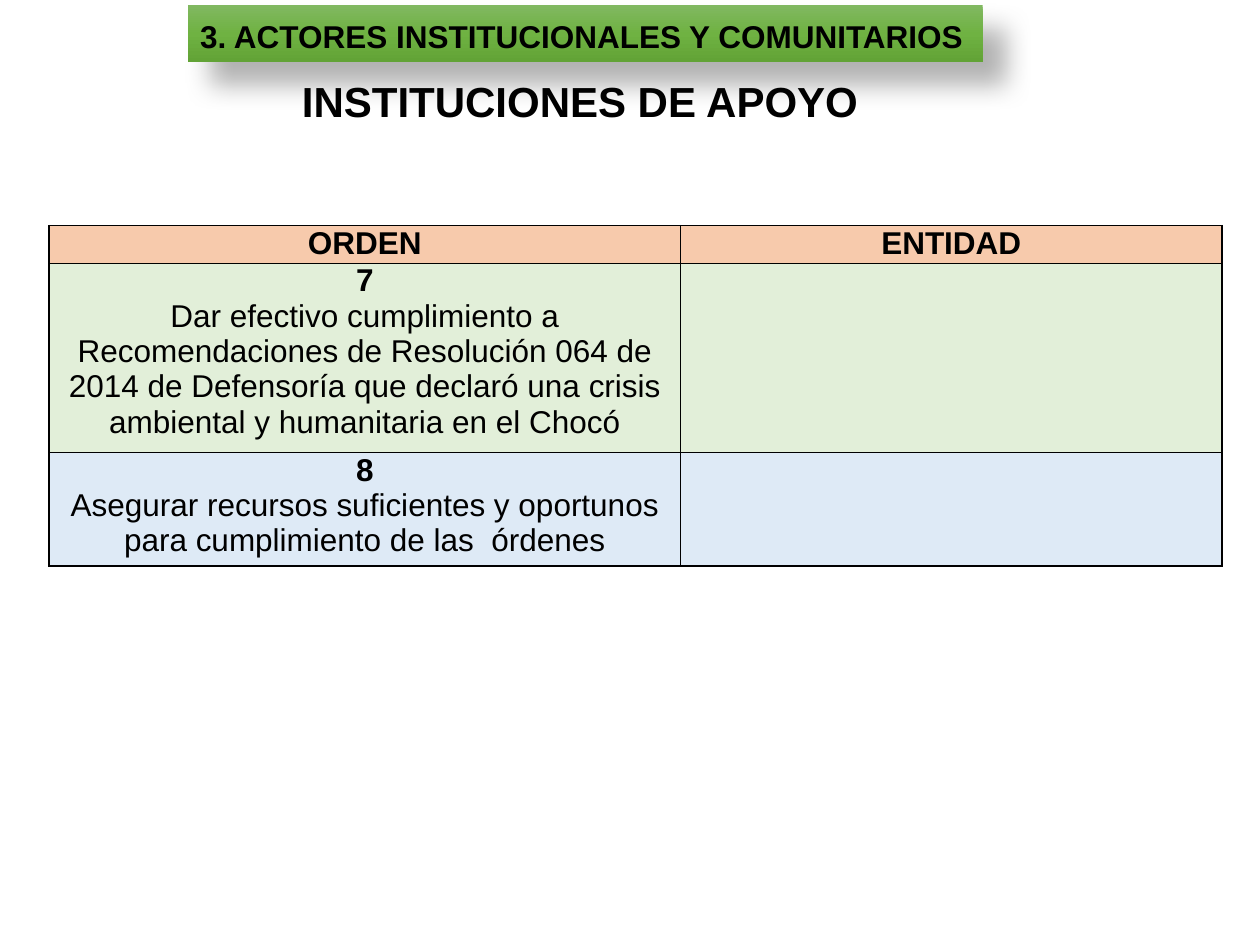
import copy
from dataclasses import dataclass

import pptx
import pptx.dml.color
import pptx.enum.shapes
import pptx.enum.text
import pptx.oxml.ns
import pptx.util
from lxml import etree

Inches = pptx.util.Inches
Pt = pptx.util.Pt
qn = pptx.oxml.ns.qn
ALIGN = pptx.enum.text.PP_ALIGN


@dataclass
class Row:
    height: float
    fill: str
    cells: tuple[tuple[str, ...], ...]  # paragraphs per cell, the first one bold


COL_WIDTHS = (5.01, 4.3)
ROWS = (
    Row(0.3, "F7CAAC", (("ORDEN",), ("ENTIDAD",))),
    Row(1.5, "E2EFD9", (("7", "Dar efectivo cumplimiento a Recomendaciones de "
                         "Resolución 064 de 2014 de Defensoría que declaró una "
                         "crisis ambiental y humanitaria en el Chocó"), ())),
    Row(0.9, "DEEAF6", (("8", "Asegurar recursos suficientes y oportunos para "
                         "cumplimiento de las  órdenes"), ())),
)


def rgb(value: str) -> pptx.dml.color.RGBColor:
    return pptx.dml.color.RGBColor.from_string(value)


def write(p, text: str, size: float = 18, bold: bool = True, color: str = "000000",
          align=ALIGN.CENTER, spacing: float | None = None) -> None:
    p.alignment = align
    if spacing:
        p.line_spacing = spacing
    r = p.add_run()
    r.text = text
    r.font.name = "Arial"
    r.font.size = Pt(size)
    r.font.bold = bold
    r.font.color.rgb = rgb(color)


def fill_gradient(sp, stops: dict[float, str]) -> None:
    """Fill from top to bottom through the given positions and colours."""
    sp.fill.gradient()
    sp.fill.gradient_angle = 270
    gs_list = sp._element.spPr.find(".//" + qn("a:gsLst"))
    while len(gs_list) < len(stops):
        gs_list.append(copy.deepcopy(gs_list[0]))
    for stop, (position, color) in zip(sp.fill.gradient_stops, stops.items()):
        stop.position = position
        stop.color.rgb = rgb(color)


def add_shadow(sp, color: str, opacity: int, blur: float, dist: float, angle: int) -> None:
    sp.shadow.inherit = False
    effects = sp._element.spPr.find(qn("a:effectLst"))
    shadow = etree.SubElement(effects, qn("a:outerShdw"), blurRad=str(Pt(blur)),
                              dist=str(Pt(dist)), dir=str(angle * 60000),
                              algn="tl", rotWithShape="0")
    clr = etree.SubElement(shadow, qn("a:srgbClr"), val=color)
    etree.SubElement(clr, qn("a:alpha"), val=str(opacity * 1000))


def add_borders(cell, color: str = "000000", width: float = 1) -> None:
    tc_pr = cell._tc.get_or_add_tcPr()
    for side in ("lnL", "lnR", "lnT", "lnB"):
        ln = etree.SubElement(tc_pr, qn(f"a:{side}"), w=str(Pt(width)))
        fill = etree.SubElement(ln, qn("a:solidFill"))
        etree.SubElement(fill, qn("a:srgbClr"), val=color)


def draw_cell(cell, paragraphs: tuple[str, ...], fill: str) -> None:
    add_borders(cell)
    cell.fill.solid()
    cell.fill.fore_color.rgb = rgb(fill)
    cell.margin_left = cell.margin_right = Inches(0.04)
    cell.margin_top = cell.margin_bottom = 0
    tf = cell.text_frame
    for i, text in enumerate(paragraphs):
        p = tf.add_paragraph() if i else tf.paragraphs[0]
        write(p, text, bold=i == 0)


def main() -> None:
    prs = pptx.Presentation()
    prs.slide_width, prs.slide_height = Inches(10), Inches(7.5)
    s = prs.slides.add_slide(prs.slide_layouts[6])

    # Section banner
    sp = s.shapes.add_shape(pptx.enum.shapes.MSO_SHAPE.RECTANGLE, Inches(1.49),
                            Inches(0.04), Inches(6.31), Inches(0.45))
    fill_gradient(sp, {0: "81B861", 0.5: "6FB242", 1: "62A336"})
    sp.line.fill.background()
    add_shadow(sp, "000000", opacity=30, blur=15, dist=18, angle=45)
    tf = sp.text_frame
    tf.word_wrap = True
    tf.vertical_anchor = pptx.enum.text.MSO_ANCHOR.TOP
    write(tf.paragraphs[0], "3. ACTORES INSTITUCIONALES Y COMUNITARIOS",
          align=ALIGN.JUSTIFY, spacing=1.15)

    # Heading
    tf = s.shapes.add_textbox(Inches(1.56), Inches(0.55), Inches(6.18),
                              Inches(0.5)).text_frame
    tf.word_wrap = True
    write(tf.paragraphs[0], "INSTITUCIONES DE APOYO ", size=24)

    # Table of orders and entities
    table = s.shapes.add_table(len(ROWS), len(COL_WIDTHS), Inches(0.39), Inches(1.79),
                               Inches(sum(COL_WIDTHS)),
                               Inches(sum(row.height for row in ROWS))).table
    for column, width in zip(table.columns, COL_WIDTHS):
        column.width = Inches(width)
    for i, row in enumerate(ROWS):
        table.rows[i].height = Inches(row.height)
        for j, paragraphs in enumerate(row.cells):
            draw_cell(table.cell(i, j), paragraphs, row.fill)

    prs.save("out.pptx")


if __name__ == "__main__":
    main()
